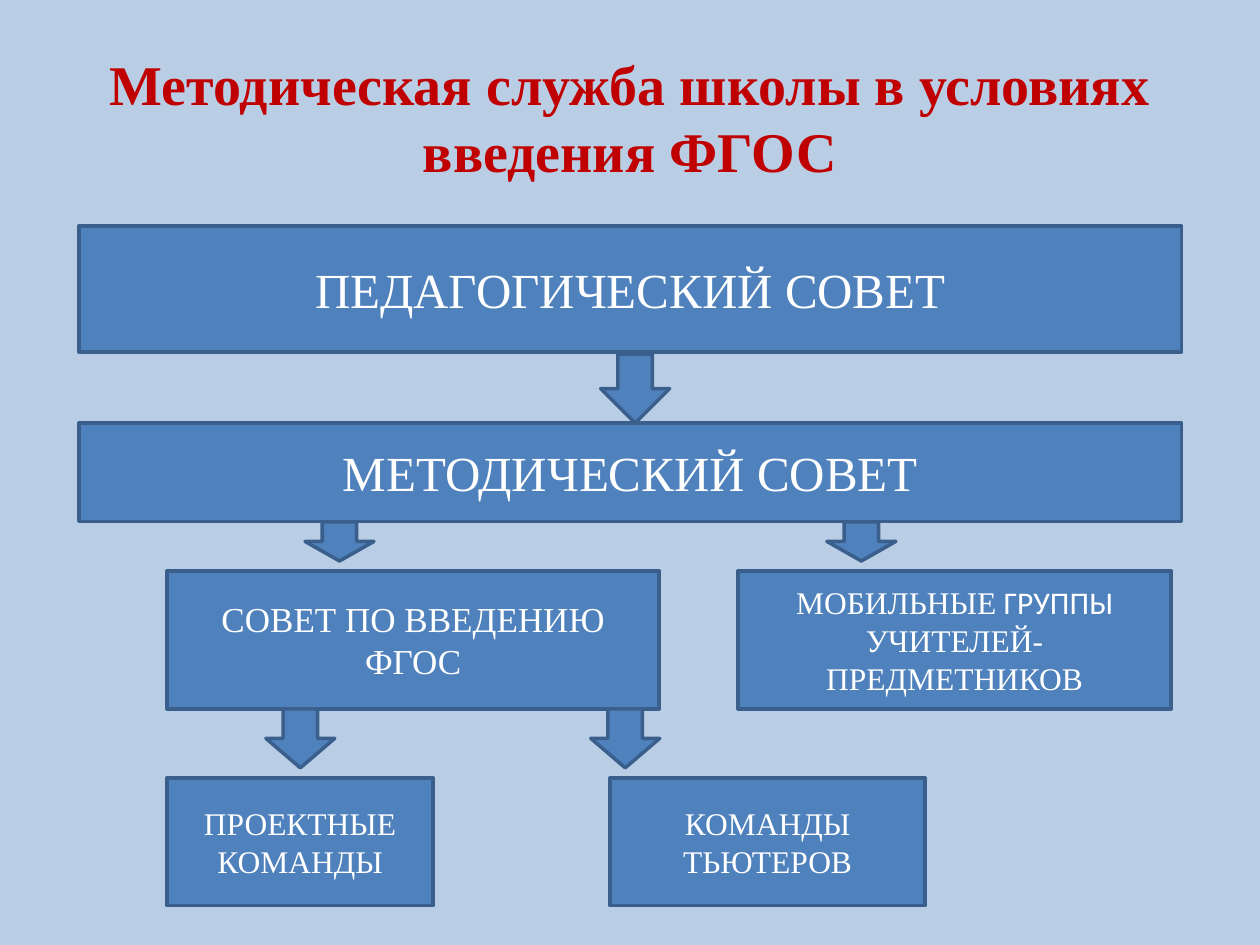
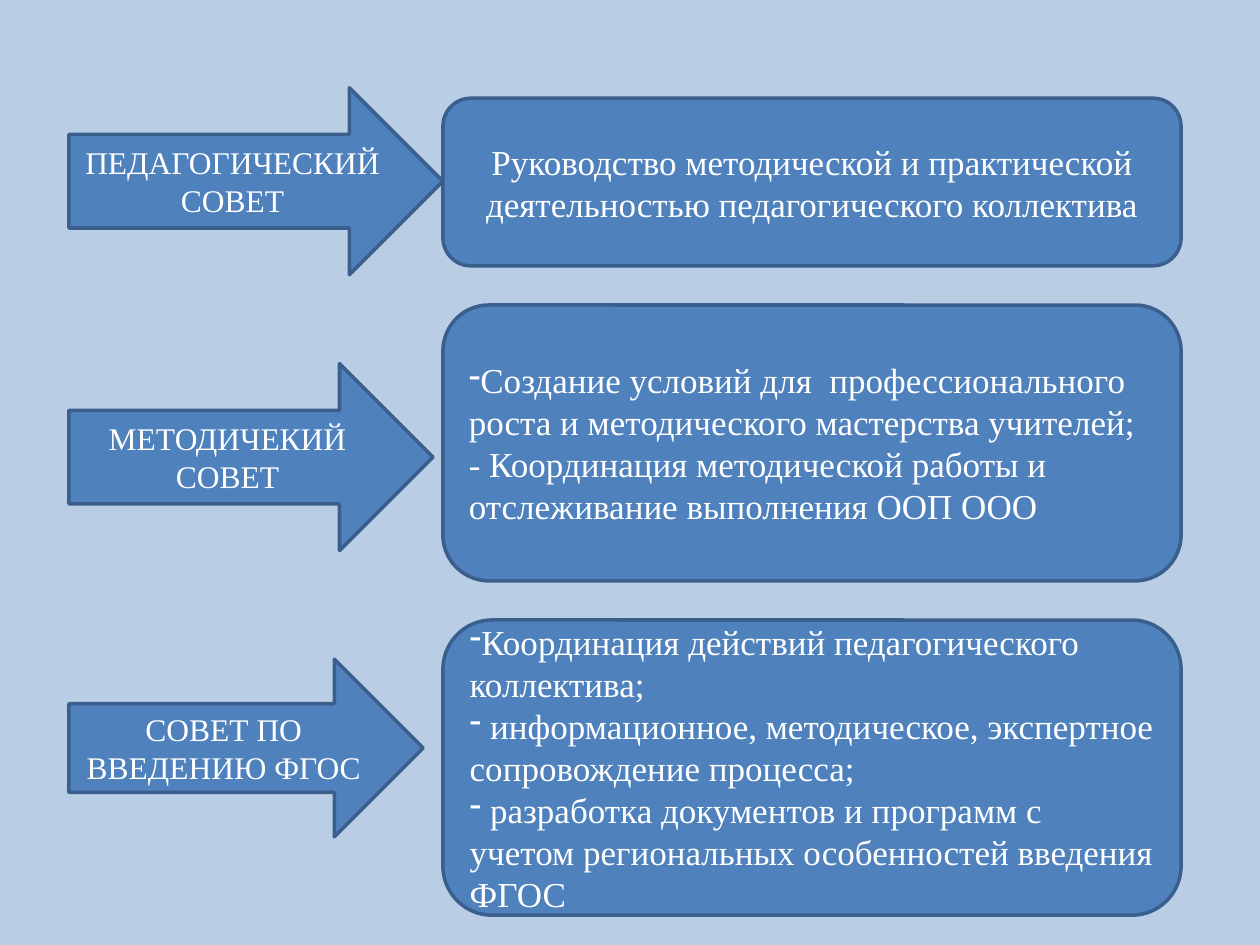
import pptx
import pptx.dml.color
import pptx.enum.shapes
import pptx.enum.text
import pptx.oxml.ns
import pptx.util
from lxml import etree

Cm, Pt = pptx.util.Cm, pptx.util.Pt
RGBColor = pptx.dml.color.RGBColor
SHAPE = pptx.enum.shapes.MSO_SHAPE
ALIGN = pptx.enum.text.PP_ALIGN

# Shared look
BACKGROUND = RGBColor(0xB9, 0xCD, 0xE5)
TITLE_RED = RGBColor(0xC0, 0x00, 0x00)
BLUE = RGBColor(0x4F, 0x81, 0xBD)
OUTLINE = RGBColor(0x3A, 0x5F, 0x8C)
WHITE = RGBColor(0xFF, 0xFF, 0xFF)
SERIF, SANS = "Times New Roman", "Calibri"

# Shared positions, in centimetres
LEFT, FULL_WIDTH = 1.59, 22.23
DOWN_ARROW_WIDTH = 1.39
ROLE_LEFT, TASK_LEFT, TASK_WIDTH = 1.39, 8.93, 14.88


def add_slide(deck):
    slide = deck.slides.add_slide(deck.slide_layouts[6])
    slide.background.fill.solid()
    slide.background.fill.fore_color.rgb = BACKGROUND
    return slide


def add_run(paragraph, text, size, color=WHITE, font=SERIF, bold=False):
    run = paragraph.add_run()
    run.text = text
    run.font.size = Pt(size)
    run.font.name = font
    run.font.bold = bold
    run.font.color.rgb = color


def add_dash_bullet(paragraph):
    properties = paragraph._p.get_or_add_pPr()
    properties.set("marL", "0")
    properties.set("indent", "0")
    etree.SubElement(properties, pptx.oxml.ns.qn("a:buFontTx"))
    bullet = etree.SubElement(properties, pptx.oxml.ns.qn("a:buChar"))
    bullet.set("char", "-")


def prepare_frame(holder):
    frame = holder.text_frame
    frame.word_wrap = True
    frame.vertical_anchor = pptx.enum.text.MSO_ANCHOR.MIDDLE
    return frame


def add_title(slide, text):
    box = slide.shapes.add_textbox(Cm(1.27), Cm(0.76), Cm(22.86), Cm(3.18))
    paragraph = prepare_frame(box).paragraphs[0]
    paragraph.alignment = ALIGN.CENTER
    add_run(paragraph, text, 32, TITLE_RED, bold=True)


def add_block(slide, kind, left, top, width, height):
    block = slide.shapes.add_shape(kind, Cm(left), Cm(top), Cm(width), Cm(height))
    block.shadow.inherit = False
    block.fill.solid()
    block.fill.fore_color.rgb = BLUE
    block.line.color.rgb = OUTLINE
    block.line.width = Pt(2)
    return block


def add_label(block, size, *runs):
    """Centred text; each run is a (text, font) pair."""
    paragraph = prepare_frame(block).paragraphs[0]
    paragraph.alignment = ALIGN.CENTER
    for text, font in runs:
        add_run(paragraph, text, size, font=font)


def add_tasks(block, tasks):
    """Left-aligned list; each task is a (text, has_bullet) pair."""
    frame = prepare_frame(block)
    for index, (text, has_bullet) in enumerate(tasks):
        paragraph = frame.add_paragraph() if index else frame.paragraphs[0]
        paragraph.alignment = ALIGN.LEFT
        if has_bullet:
            add_dash_bullet(paragraph)
        add_run(paragraph, text, 20)


def build_structure(deck):
    slide = add_slide(deck)
    add_title(slide, "Методическая служба школы в условиях введения ФГОС")

    # Councils and teams
    units = [
        (LEFT, 4.56, FULL_WIDTH, 2.54, 28, [("ПЕДАГОГИЧЕСКИЙ СОВЕТ", SERIF)]),
        (LEFT, 8.53, FULL_WIDTH, 1.98, 28, [("МЕТОДИЧЕСКИЙ СОВЕТ", SERIF)]),
        (3.37, 11.51, 9.92, 2.78, 20, [("СОВЕТ ПО ВВЕДЕНИЮ ФГОС", SERIF)]),
        (14.88, 11.51, 8.73, 2.78, 18,
         [("МОБИЛЬНЫЕ", SERIF), (" ГРУППЫ ", SANS),
          ("УЧИТЕЛЕЙ-ПРЕДМЕТНИКОВ", SERIF)]),
        (3.37, 15.68, 5.36, 2.58, 18, [("ПРОЕКТНЫЕ КОМАНДЫ", SERIF)]),
        (12.3, 15.68, 6.35, 2.58, 18, [("КОМАНДЫ ТЬЮТЕРОВ", SERIF)]),
    ]
    for left, top, width, height, size, runs in units:
        unit = add_block(slide, SHAPE.RECTANGLE, left, top, width, height)
        add_label(unit, size, *runs)

    # Arrows between the levels
    levels = [(7.14, 1.39, [12.11]), (10.52, 0.79, [6.15, 16.67]),
              (14.29, 1.19, [5.36, 11.91])]
    for top, height, lefts in levels:
        for left in lefts:
            add_block(slide, SHAPE.DOWN_ARROW, left, top, DOWN_ARROW_WIDTH, height)


def build_duties(deck):
    slide = add_slide(deck)

    # Who is responsible
    roles = [
        ("ПЕДАГОГИЧЕСКИЙ СОВЕТ", 1.77, 7.54, 3.77),
        ("МЕТОДИЧЕКИЙ СОВЕТ", 7.33, 7.34, 3.77),
        ("СОВЕТ ПО ВВЕДЕНИЮ ФГОС", 13.29, 7.14, 3.58),
    ]
    for name, top, width, height in roles:
        role = add_block(slide, SHAPE.RIGHT_ARROW, ROLE_LEFT, top, width, height)
        add_label(role, 18, (name, SERIF))

    # What they do
    guidance, conditions, coordination = [
        add_block(slide, SHAPE.ROUNDED_RECTANGLE, TASK_LEFT, top, TASK_WIDTH, height)
        for top, height in [(1.98, 3.38), (6.15, 5.56), (12.5, 5.95)]
    ]
    add_label(guidance, 20, ("Руководство методической и практической "
                             "деятельностью педагогического коллектива", SERIF))
    add_tasks(conditions, [
        ("Создание условий для  профессионального роста и методического "
         "мастерства учителей;", True),
        ("- Координация методической работы и отслеживание выполнения "
         "ООП ООО", False),
    ])
    add_tasks(coordination, [
        ("Координация действий педагогического коллектива;", True),
        (" информационное, методическое, экспертное сопровождение процесса;", True),
        (" разработка документов и программ с учетом региональных "
         "особенностей введения ФГОС", True),
    ])


def main():
    deck = pptx.Presentation()
    deck.slide_width, deck.slide_height = Cm(25.4), Cm(19.05)
    build_structure(deck)
    build_duties(deck)
    deck.save("out.pptx")


if __name__ == "__main__":
    main()
